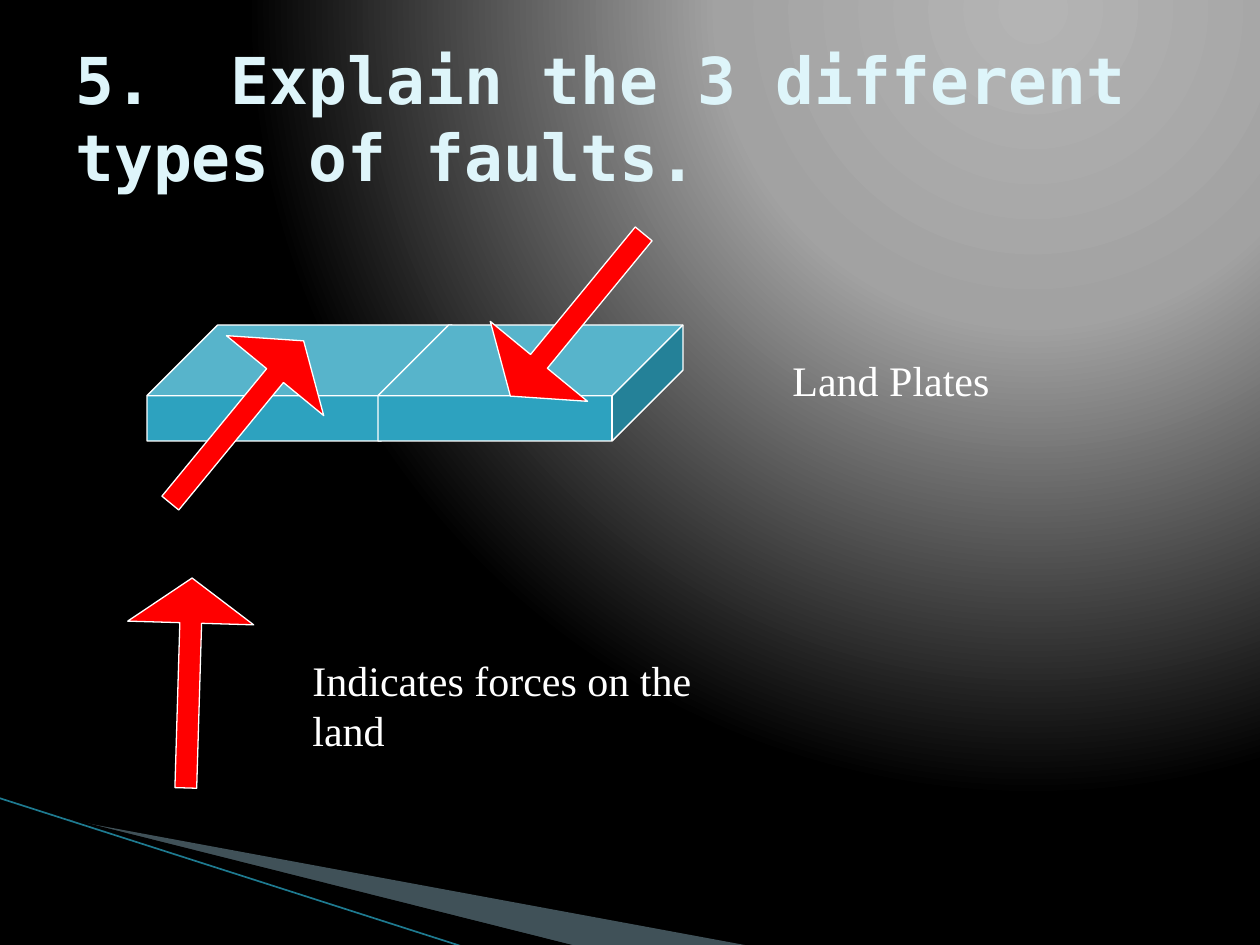
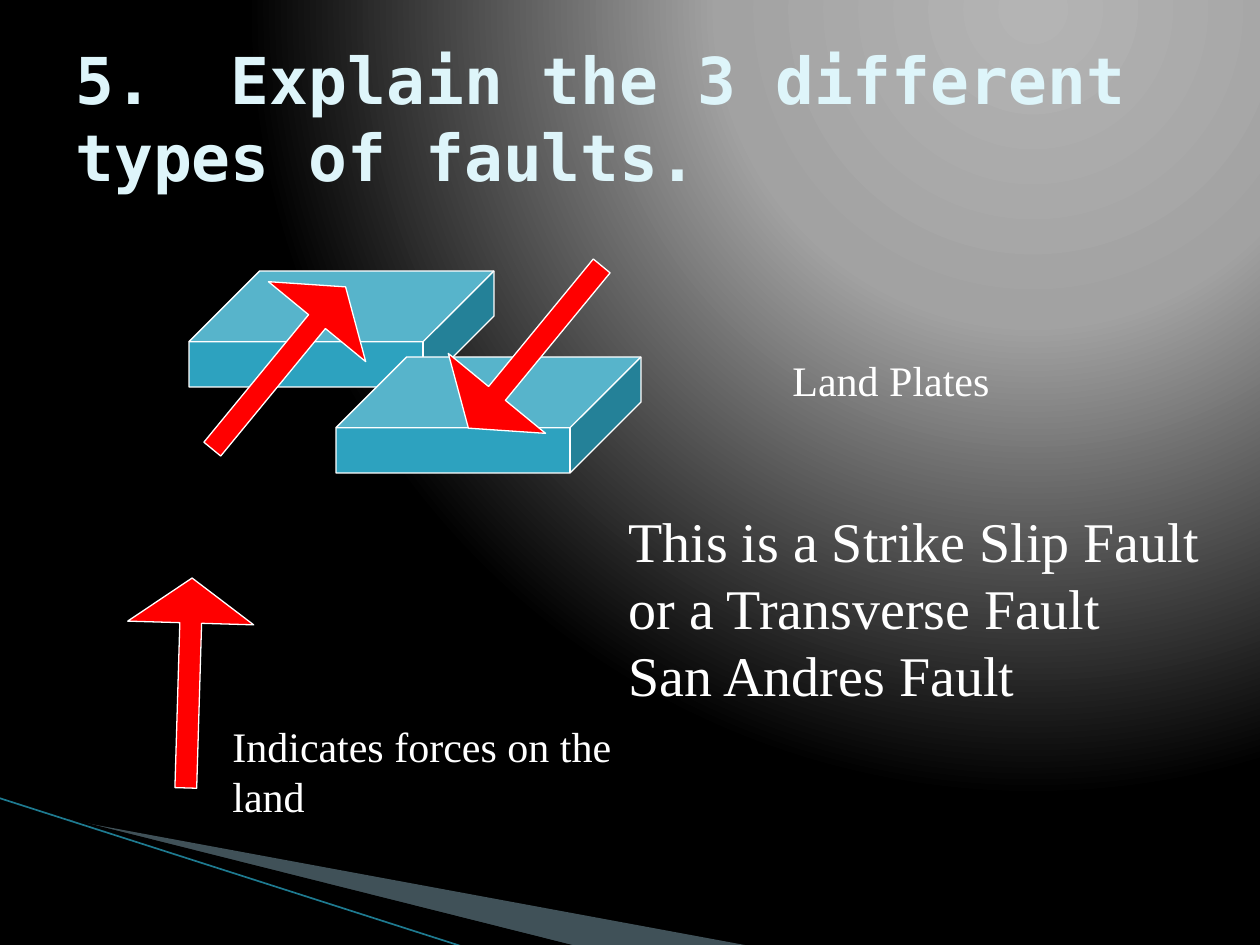
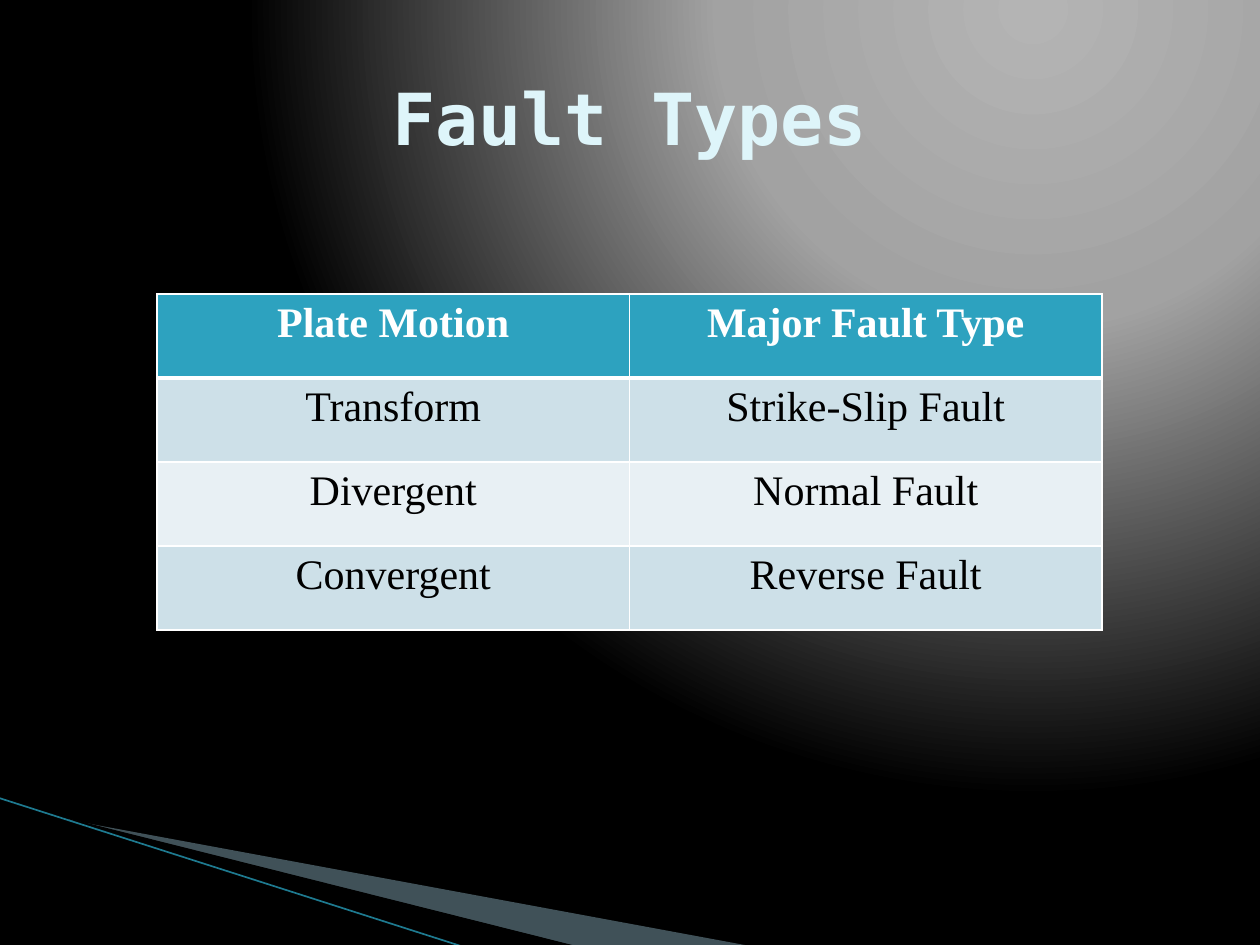
import pptx
import pptx.util
import pptx.dml.color
import pptx.enum.shapes
import pptx.enum.text
import pptx.oxml.ns
from dataclasses import dataclass
from lxml import etree

Shape = pptx.enum.shapes.MSO_SHAPE
Align = pptx.enum.text.PP_ALIGN
Pt = pptx.util.Pt
qn = pptx.oxml.ns.qn


@dataclass(frozen=True)
class Theme:
    head: str = "DejaVu Sans Mono"
    body: str = "Times New Roman"
    ask: float = 36.9
    name: float = 41
    text: float = 24
    note: float = 32
    pale: str = "DEF5FA"
    white: str = "FFFFFF"
    black: str = "000000"
    plate: str = "2DA2BF"
    force: str = "FF0000"
    wedge: str = "A0CBDC"
    rule: str = "1E7A90"
    bands: tuple = ("CDE0E8", "E8F0F4")
    glow: tuple = ((0, "B4B4B4"), (40, "A2A2A2"), (100, "000000"))


T = Theme()
TITLE = (63, 38, 1134, 158)
ASK = "5.  Explain the 3 different types of faults."
CUBE = (305, 116)
ARROW = (210, 126)
ROWS = (
    ("Plate Motion", "Major Fault Type"),
    ("Transform", "Strike-Slip Fault"),
    ("Divergent", "Normal Fault"),
    ("Convergent", "Reverse Fault"),
)


def px(n):
    return round(n * 914400 / 126)


def span(*nums):
    return [px(n) for n in nums]


def rgb(code):
    return pptx.dml.color.RGBColor.from_string(code)


def paint(item, code):
    item.fill.solid()
    item.fill.fore_color.rgb = rgb(code)


def write(para, text, size, color, font=T.body, bold=False, align=Align.LEFT):
    para.alignment = align
    run = para.add_run()
    run.text = text
    run.font.name = font
    run.font.size = Pt(size)
    run.font.bold = bold
    run.font.color.rgb = rgb(color)


def glow(master):
    master.background.fill.gradient()
    grad = master.element.find(".//" + qn("a:gradFill"))
    for child in list(grad):
        grad.remove(child)
    stops = etree.SubElement(grad, qn("a:gsLst"))
    for pos, code in T.glow:
        stop = etree.SubElement(stops, qn("a:gs"), pos=str(pos * 1000))
        etree.SubElement(stop, qn("a:srgbClr"), val=code)
    ring = etree.SubElement(grad, qn("a:path"), {"path": "circle"})
    etree.SubElement(ring, qn("a:fillToRect"), l="65000", t="0", r="0", b="98000")


def wedge(slide, points, code):
    pen = slide.shapes.build_freeform(*points[0], scale=px(1))
    pen.add_line_segments(points[1:], close=True)
    shape = pen.convert_to_shape()
    shape.shadow.inherit = False
    paint(shape, code)
    shape.line.fill.background()
    return shape


def swoosh(slide):
    sheer = wedge(slide, [(69, 820), (750, 946), (575, 946), (69, 819)], T.wedge)
    tint = sheer.fill._xPr.find(".//" + qn("a:srgbClr"))
    etree.SubElement(tint, qn("a:alpha"), val="40000")
    wedge(slide, [(67, 818), (576, 946), (469, 948), (68, 819)], T.black)
    kind = pptx.enum.shapes.MSO_CONNECTOR.STRAIGHT
    rule = slide.shapes.add_connector(kind, *span(-1, 798, 467, 948))
    rule.line.color.rgb = rgb(T.rule)
    rule.line.width = Pt(0.95)
    etree.SubElement(rule._element.spPr, qn("a:effectLst"))


def title(slide, box, text, size, align=Align.LEFT):
    frame = slide.shapes.add_textbox(*span(*box)).text_frame
    frame.word_wrap = True
    frame.vertical_anchor = pptx.enum.text.MSO_ANCHOR.MIDDLE
    write(frame.paragraphs[0], text, size, T.pale, T.head, True, align)


def label(slide, box, lines, size=T.text):
    frame = slide.shapes.add_textbox(*span(*box)).text_frame
    frame.word_wrap = False
    frame.auto_size = pptx.enum.text.MSO_AUTO_SIZE.SHAPE_TO_FIT_TEXT
    for i, line in enumerate(lines):
        para = frame.add_paragraph() if i else frame.paragraphs[0]
        write(para, line, size, T.white)


def solid(shapes, kind, box, code, knobs):
    shape = shapes.add_shape(kind, *span(*box))
    shape.shadow.inherit = False
    paint(shape, code)
    shape.line.color.rgb = rgb(T.white)
    shape.line.width = Pt(0.75)
    for i, knob in enumerate(knobs):
        shape.adjustments[i] = knob
    return shape


def force(shapes, x, y, turn):
    box = (x, y, *ARROW)
    solid(shapes, Shape.RIGHT_ARROW, box, T.force, (0.173, 0.357)).rotation = turn


def plate(slide, spot, shift, turn):
    x, y = spot
    group = slide.shapes.add_group_shape().shapes
    solid(group, Shape.CUBE, (x, y, *CUBE), T.plate, (0.61,))
    force(group, x + shift[0], y + shift[1], turn)


def fault(slide, back, front, key):
    title(slide, TITLE, ASK, T.ask)
    plate(slide, back, (-15, 34), 309.4)
    label(slide, (780, 348, 222, 63), ["Land Plates"])
    plate(slide, front, (94, -73), 129.4)
    force(slide.shapes, 84, 620, 271.7)
    label(slide, (*key, 486, 63), ["Indicates forces on the land"])


def edge(cell, side, width):
    line = etree.SubElement(cell._tc.get_or_add_tcPr(), qn("a:ln" + side), w=str(Pt(width)))
    fill = etree.SubElement(line, qn("a:solidFill"))
    etree.SubElement(fill, qn("a:srgbClr"), val=T.white)


def grid(slide, box, rows):
    table = slide.shapes.add_table(len(rows), len(rows[0]), *span(*box)).table
    for r, row in enumerate(rows):
        top = r == 0
        for c, text in enumerate(row):
            cell = table.cell(r, c)
            for side in "LRTB":
                thick = (top and side == "B") or (r == 1 and side == "T")
                edge(cell, side, 3 if thick else 1)
            paint(cell, T.plate if top else T.bands[(r - 1) % 2])
            ink = T.white if top else T.black
            write(cell.text_frame.paragraphs[0], text, T.text, ink, bold=top, align=Align.CENTER)


def main():
    deck = pptx.Presentation()
    deck.slide_width, deck.slide_height = span(1260, 945)
    glow(deck.slide_master)
    pages = [deck.slides.add_slide(deck.slide_layouts[6]) for _ in range(3)]
    for page in pages:
        swoosh(page)
    whole, slip, types = pages
    fault(whole, (147, 325), (378, 325), (300, 648))
    fault(slip, (189, 271), (336, 357), (220, 714))
    lines = ["This is a Strike Slip Fault", "or a Transverse Fault", "San Andres Fault"]
    label(slip, (616, 500, 602, 217), lines, T.note)
    title(types, TITLE, "Fault Types", T.name, Align.CENTER)
    grid(types, (157, 294, 945, 336), ROWS)
    deck.save("out.pptx")


if __name__ == "__main__":
    main()
